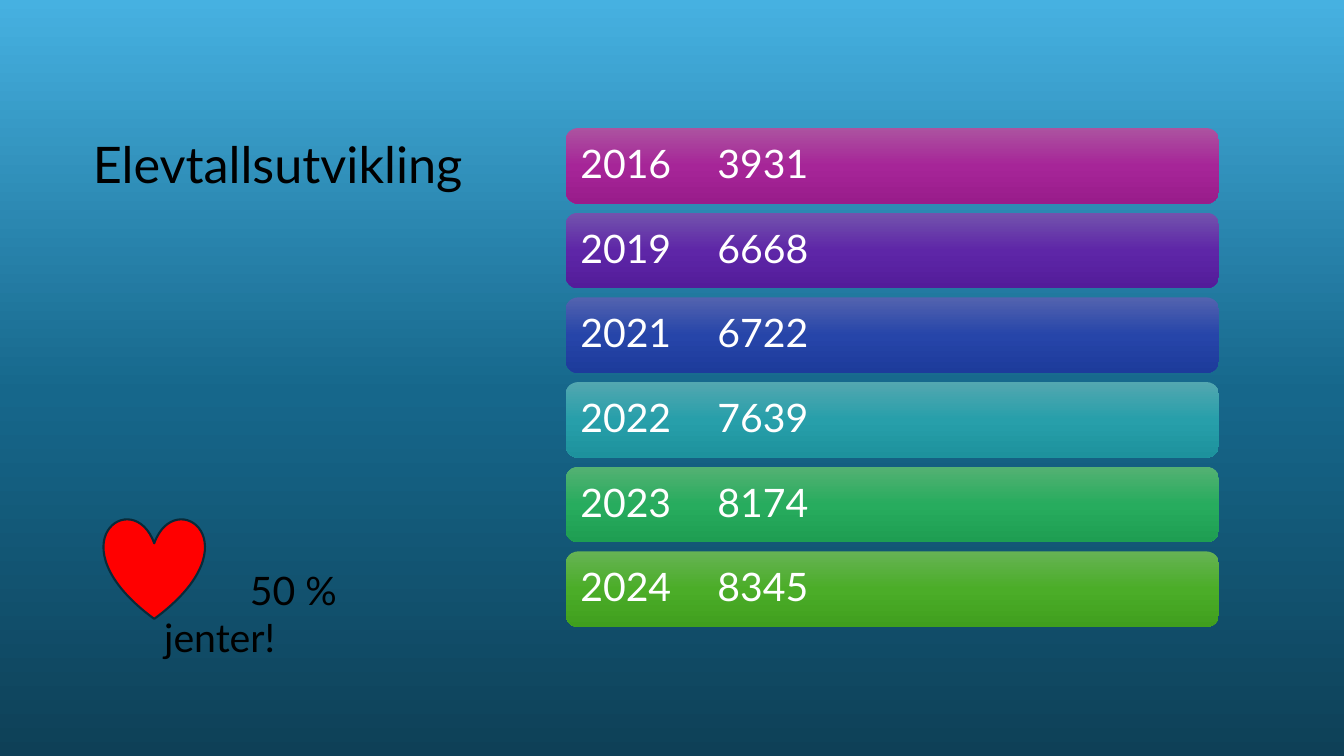
from lxml.etree import SubElement
from pptx import Presentation
from pptx.dml.color import RGBColor as RGB
from pptx.enum.shapes import MSO_SHAPE as Shape
from pptx.enum.text import MSO_ANCHOR as Anchor, PP_ALIGN as Align
from pptx.oxml.ns import qn
from pptx.util import Inches, Pt

COLORS = {
    "black": "000000", "white": "FFFFFF", "heart": "FF0000", "edge": "092A39",
    "sky": "46B1E1", "sea": "16678B", "deep": "0E4057",
}
BARS = [
    (2016, 3931, ("AC53A0", "A62598", "991C8B")),
    (2019, 6668, ("7353AD", "5E26A7", "531C9A")),
    (2021, 6722, ("5363AF", "2645A9", "1D3B9B")),
    (2022, 7639, ("53A7B0", "279FAA", "1D929D")),
    (2023, 8174, ("54B173", "27AC5E", "1E9E52")),
    (2024, 8345, ("66B354", "4BAD28", "409F1E")),
]


def fade(fill, node, tones, mid):
    """Fill from top to bottom with three tones, the second at mid percent."""
    fill.gradient()
    fill.gradient_angle = 270
    stops = node.find(".//" + qn("a:gsLst"))
    for old in list(stops):
        stops.remove(old)
    for pos, tone in zip((0, mid, 100), tones):
        stop = SubElement(stops, qn("a:gs"), pos=str(pos * 1000))
        SubElement(stop, qn("a:srgbClr"), val=tone)


def style(para, size, color):
    para.alignment = Align.LEFT
    para.font.name = "Lato"
    para.font.size = Pt(size)
    para.font.color.rgb = RGB.from_string(COLORS[color])


prs = Presentation()
prs.slide_width, prs.slide_height = Inches(13.33), Inches(7.5)
slide = prs.slides.add_slide(prs.slide_layouts[5])
shapes = slide.shapes
fade(slide.background.fill, slide.element,
     [COLORS[key] for key in ("sky", "sea", "deep")], 52)

# Title
title = shapes.title
title.left, title.top = Inches(0.82), Inches(0.67)
title.width, title.height = Inches(3.98), Inches(1.97)
title.text_frame.text = "Elevtallsutvikling"
title.text_frame.vertical_anchor = Anchor.MIDDLE
head = title.text_frame.paragraphs[0]
head.line_spacing = 0.9
style(head, 36, "black")

# One bar for each year
left, top, width, height, step = 5.61, 1.27, 6.48, 0.75, 0.84
for row, (year, count, tones) in enumerate(BARS):
    bar = shapes.add_shape(
        Shape.ROUNDED_RECTANGLE, Inches(left), Inches(top + row * step),
        Inches(width), Inches(height))
    bar.shadow.inherit = False
    bar.line.fill.background()
    fade(bar.fill, bar.element.spPr, tones, 50)
    frame = bar.text_frame
    frame.margin_left = Inches(0.11)
    frame.vertical_anchor = Anchor.MIDDLE
    frame.text = f"{year}\t{count}"
    para = frame.paragraphs[0]
    para.line_spacing = 0.9
    style(para, 28, "white")
    tabs = SubElement(para._p.get_or_add_pPr(), qn("a:tabLst"))
    SubElement(tabs, qn("a:tab"), pos=str(Inches(1.36)), algn="l")

# Share of girls, with a heart
note = shapes.add_textbox(Inches(1.53), Inches(5.57), Inches(2.8), Inches(1.03))
note.text_frame.word_wrap = True
note.text_frame.text = "50 % jenter!"
share = note.text_frame.paragraphs[0]
style(share, 28, "black")
share._p.get_or_add_pPr().set("indent", str(Inches(0.85)))

heart = shapes.add_shape(
    Shape.HEART, Inches(1.03), Inches(5.14), Inches(1), Inches(1))
heart.shadow.inherit = False
heart.fill.solid()
heart.fill.fore_color.rgb = RGB.from_string(COLORS["heart"])
heart.line.color.rgb = RGB.from_string(COLORS["edge"])
heart.line.width = Pt(1.5)

prs.save("out.pptx")
